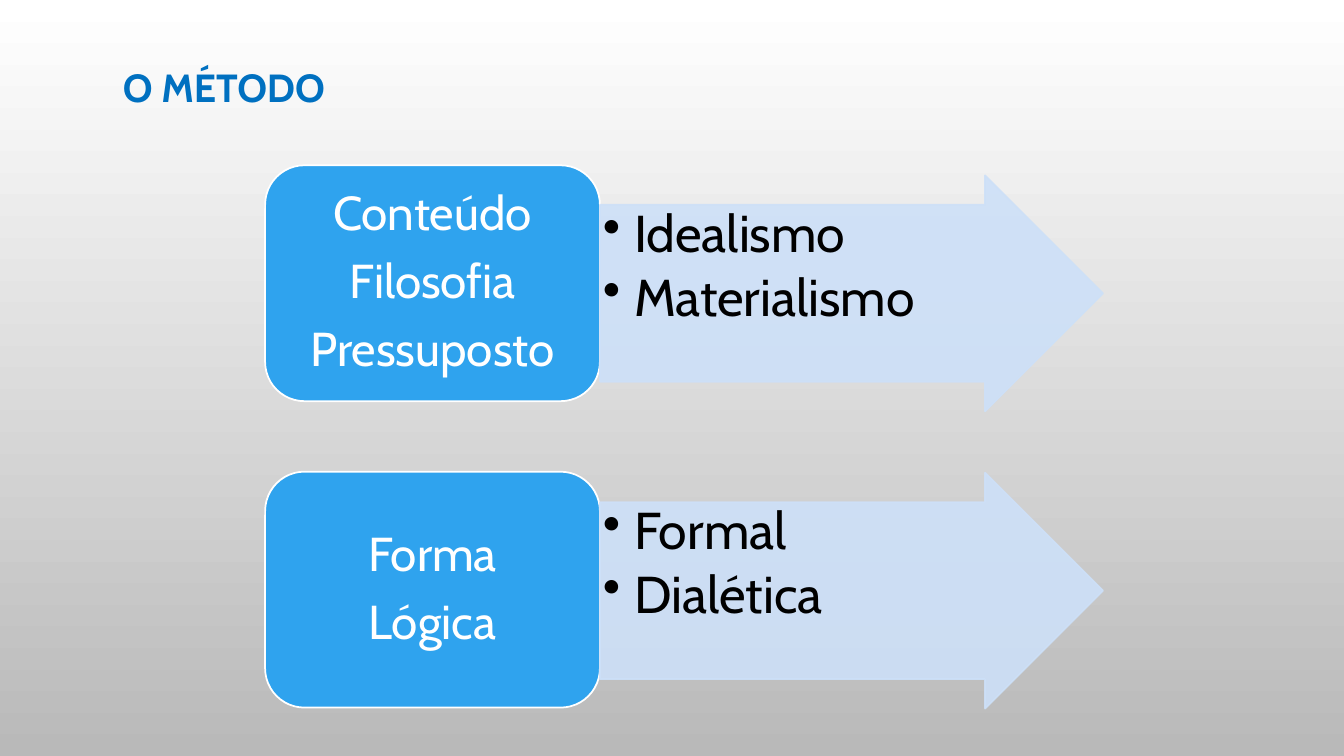
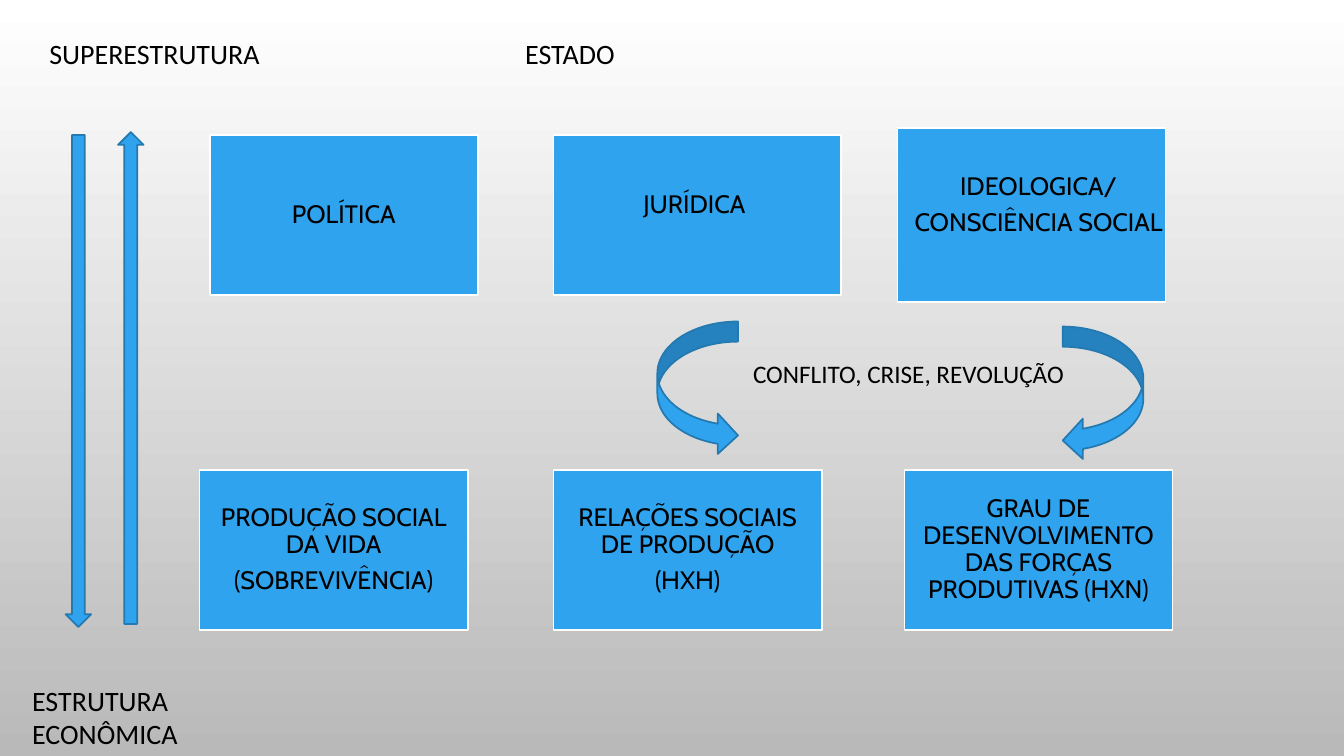
import pptx
import pptx.util
import pptx.dml.color
import pptx.enum.shapes
import pptx.enum.text
import lxml.etree
from pptx.oxml.ns import qn

Inches = pptx.util.Inches
Pt = pptx.util.Pt
SHAPE = pptx.enum.shapes.MSO_SHAPE
ANCHOR = pptx.enum.text.MSO_ANCHOR
ALIGN = pptx.enum.text.PP_ALIGN

WIDTH, HEIGHT = 13.33, 7.5
COLORS = {
    "top": "FFFFFF",
    "bottom": "B9B9B9",
    "title": "0070C0",
    "box": "2FA3EE",
    "edge": "2379B0",
    "pale": "CDE0F8",
    "white": "FFFFFF",
    "black": "000000",
}
HEADING_FONT, LABEL_FONT = "Cabin", "Calibri"


def color(name):
    return pptx.dml.color.RGBColor.from_string(COLORS[name])


def place(left, top, width, height):
    return (Inches(WIDTH * left / 100), Inches(HEIGHT * top / 100),
            Inches(WIDTH * width / 100), Inches(HEIGHT * height / 100))


def set_background(master):
    fill = master.background.fill
    fill.gradient()
    fill.gradient_angle = 270
    for stop, name in zip(fill.gradient_stops, ("top", "bottom")):
        stop.color.rgb = color(name)


def set_insets(frame, left, top, right, bottom):
    frame.margin_left, frame.margin_top = Inches(left), Inches(top)
    frame.margin_right, frame.margin_bottom = Inches(right), Inches(bottom)


def add_bullet(paragraph, indent):
    properties = paragraph._p.get_or_add_pPr()
    properties.set("marL", str(Inches(indent)))
    properties.set("indent", str(-Inches(indent)))
    lxml.etree.SubElement(properties, qn("a:buChar")).set("char", "•")


def write(frame, lines, size, ink="black", font=HEADING_FONT, bold=False,
          align=ALIGN.LEFT, spacing=1.0, after=0, bullet=None):
    for index, line in enumerate(lines):
        paragraph = frame.add_paragraph() if index else frame.paragraphs[0]
        paragraph.text = line
        if bullet:
            add_bullet(paragraph, bullet)
        paragraph.alignment = align
        paragraph.line_spacing = spacing
        paragraph.space_after = Pt(round(size * after, 1))
        paragraph.font.size = Pt(size)
        paragraph.font.name = font
        paragraph.font.bold = bold
        paragraph.font.color.rgb = color(ink)


def add_shape(slide, kind, area, fill="box", line="white"):
    shape = slide.shapes.add_shape(kind, *place(*area))
    shape.shadow.inherit = False
    shape.fill.solid()
    shape.fill.fore_color.rgb = color(fill)
    shape.line.color.rgb = color(line)
    shape.line.width = Pt(1.25)
    return shape


def add_label(slide, area, lines, size, wrap=True, **style):
    frame = slide.shapes.add_textbox(*place(*area)).text_frame
    frame.word_wrap = wrap
    write(frame, lines, size, **style)


def add_box(slide, kind, area, lines, size, ink, insets):
    frame = add_shape(slide, kind, area).text_frame
    frame.word_wrap = True
    frame.vertical_anchor = ANCHOR.MIDDLE
    set_insets(frame, *insets)
    write(frame, lines, size, ink, align=ALIGN.CENTER, spacing=0.9, after=0.35)


def add_bullet_arrow(slide, area, lines):
    arrow = add_shape(slide, SHAPE.RIGHT_ARROW, area, "pale", "pale")
    arrow.adjustments[0], arrow.adjustments[1] = 0.75, 0.5
    for tint in arrow._element.spPr.iter(qn("a:srgbClr")):
        lxml.etree.SubElement(tint, qn("a:alpha")).set("val", "90000")
    frame = arrow.text_frame
    frame.word_wrap = True
    frame.vertical_anchor = ANCHOR.TOP
    set_insets(frame, 0.03, 0.03, 0.03, 0.03)
    write(frame, lines, 37, spacing=0.9, after=0.15, bullet=0.31)


def build_method(slide):
    rows = [
        (21.87, 23.2, ["Conteúdo", "Filosofia", "Pressuposto"], ["Idealismo", "Materialismo"]),
        (62.4, 62.53, ["Forma", "Lógica"], ["Formal", "Dialética"]),
    ]
    for box_top, arrow_top, topics, options in rows:
        add_box(slide, SHAPE.ROUNDED_RECTANGLE, (19.73, box_top, 24.91, 31.2),
                topics, 34, "white", (0.14, 0.07, 0.14, 0.07))
        add_bullet_arrow(slide, (44.64, arrow_top, 37.43, 31.2), options)
    add_label(slide, (8.4, 7.73, 50, 8), ["O MÉTODO"], 28, ink="title", bold=True)


def build_structure(slide):
    width, height, base = 19.95, 21.2, 62.13
    boxes = [
        ((15.6, 17.87, width, height), 0, 0, ["POLÍTICA"]),
        ((41.19, 17.87, 21.38, height), -0.03, 0.1, ["JURÍDICA"]),
        ((66.77, 16.93, width, 23.07), 0.07, 0.1, ["IDEOLOGICA/", "CONSCIÊNCIA SOCIAL"]),
        ((14.85, base, width, height), 0, 0, ["PRODUÇÃO SOCIAL DA VIDA", "(SOBREVIVÊNCIA)"]),
        ((41.19, base, width, height), 0, 0, ["RELAÇÕES SOCIAIS DE PRODUÇÃO", "(HXH)"]),
        ((67.29, base, width, height), 0, 0,
         ["GRAU DE DESENVOLVIMENTO DAS FORÇAS PRODUTIVAS (HXN)"]),
    ]
    for area, shift, lift, lines in boxes:
        insets = (0.07 + shift, 0.07, 0.07 - shift, 0.07 + 2 * lift)
        add_box(slide, SHAPE.RECTANGLE, area, lines, 18, "black", insets)

    arrows = [
        (SHAPE.DOWN_ARROW, (4.88, 17.87, 1.9, 65.07)),
        (SHAPE.UP_ARROW, (8.78, 17.47, 1.9, 65.07)),
        (SHAPE.CURVED_LEFT_ARROW, (79.07, 43.2, 6, 17.73)),
        (SHAPE.CURVED_RIGHT_ARROW, (48.91, 42.53, 6, 17.73)),
    ]
    for kind, area in arrows:
        add_shape(slide, kind, area, line="edge")

    labels = [
        ((2.93, 4.13, 20, 5.8), ["SUPERESTRUTURA"], 20, True),
        ((38.33, 4.13, 15, 5.8), ["ESTADO"], 20, True),
        ((1.65, 89.73, 27, 10.27), ["ESTRUTURA", "ECONÔMICA"], 20, True),
        ((55.29, 46.67, 24.83, 5.33), ["CONFLITO, CRISE, REVOLUÇÃO"], 18, False),
    ]
    for area, lines, size, wrap in labels:
        add_label(slide, area, lines, size, wrap, font=LABEL_FONT)


def main():
    presentation = pptx.Presentation()
    presentation.slide_width = Inches(WIDTH)
    presentation.slide_height = Inches(HEIGHT)
    set_background(presentation.slide_master)
    for build in (build_method, build_structure):
        build(presentation.slides.add_slide(presentation.slide_layouts[6]))
    presentation.save("out.pptx")


if __name__ == "__main__":
    main()
